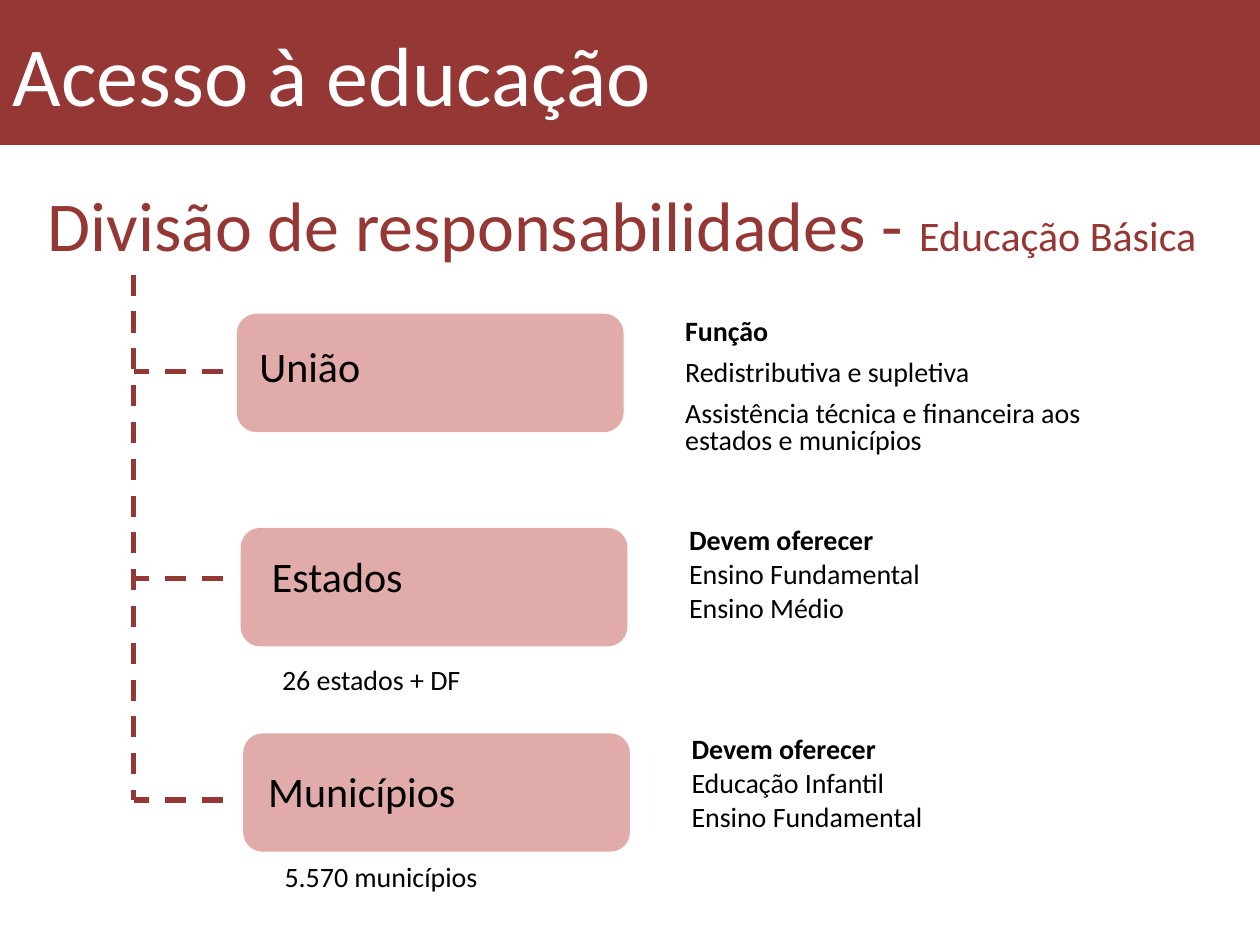
from lxml import etree
from pptx import Presentation, util as u
from pptx.dml.color import RGBColor
from pptx.enum import dml, shapes, text
from pptx.oxml.ns import qn

COLORS = {"dark": "953735", "box": "D99694", "black": "000000", "white": "FFFFFF"}
FONT = "Calibri"
TITLE = "Acesso à educação"
HEADING = [("Divisão de responsabilidades - ", 40), ("Educação Básica", 24)]

# Positions are in inches; "label" is the offset of the name from its box.
LEVELS = [
    {"name": "União", "box": (1.88, 2.49), "label": (0.08, 0.16), "branch": 2.95,
     "duties": ["Função", "Redistributiva e supletiva",
                "Assistência técnica e financeira aos estados e municípios"],
     "duties_at": (5.34, 2.49, 3.86, 1.23), "spacing": 0.8},
    {"name": "Estados", "box": (1.91, 4.19), "label": (0.15, 0.13), "branch": 4.59,
     "duties": ["Devem oferecer", "Ensino Fundamental", "Ensino Médio"],
     "duties_at": (5.37, 4.19, 2.99, 0.87), "spacing": 0.6,
     "count": "26 estados + DF", "count_at": (2.14, 5.21, 1.81, 0.37)},
    {"name": "Municípios", "box": (1.93, 5.82), "label": (0.1, 0.21), "branch": 6.35,
     "duties": ["Devem oferecer", "Educação Infantil", "Ensino Fundamental"],
     "duties_at": (5.39, 5.85, 2.99, 0.87), "spacing": 0.6,
     "count": "5.570 municípios", "count_at": (2.16, 6.77, 2.28, 0.37)},
]
BOX_SIZE = (3.07, 0.94)
LABEL_SIZE = (2.99, 0.5)
TRUNK_X, TRUNK_TOP, BRANCH_END = 1.06, 2.18, 1.77


def rgb(name):
    return RGBColor.from_string(COLORS[name])


def inches(values):
    return [u.Inches(value) for value in values]


def style(font, size, color="black", bold=False):
    font.name, font.size, font.bold = FONT, u.Pt(size), bold
    font.color.rgb = rgb(color)


def add_text(slide, at, lines, size, spacing=None):
    """Add a text box; when there are several lines, the first is bold."""
    frame = slide.shapes.add_textbox(*inches(at)).text_frame
    frame.word_wrap = True
    for index, line in enumerate(lines):
        paragraph = frame.add_paragraph() if index else frame.paragraphs[0]
        paragraph.text = line
        style(paragraph.font, size, bold=len(lines) > 1 and index == 0)
        if spacing:
            paragraph.line_spacing = spacing
        if index:
            paragraph.space_before = u.Pt(size / 2)


def add_box(slide, at):
    box = slide.shapes.add_shape(shapes.MSO_SHAPE.ROUNDED_RECTANGLE, *inches(at))
    box.shadow.inherit = False
    box.fill.solid()
    box.fill.fore_color.rgb = rgb("box")
    box.line.fill.background()
    color = box.fill._xPr.find(qn("a:solidFill"))[0]
    etree.SubElement(color, qn("a:alpha"), val="80000")


def add_dashed_line(slide, *ends):
    line = slide.shapes.add_connector(shapes.MSO_CONNECTOR.STRAIGHT, *inches(ends))
    line.line.color.rgb = rgb("dark")
    line.line.width = u.Pt(3)
    line.line.dash_style = dml.MSO_LINE.DASH
    etree.SubElement(line._element.spPr, qn("a:effectLst"))


def add_title(slide):
    title = slide.shapes.title
    title.left, title.top, title.width, title.height = inches((0, 0, 10, 1.15))
    title.fill.solid()
    title.fill.fore_color.rgb = rgb("dark")
    frame = title.text_frame
    frame.text = TITLE
    frame.auto_size = text.MSO_AUTO_SIZE.NONE
    frame.vertical_anchor = text.MSO_ANCHOR.MIDDLE
    paragraph = frame.paragraphs[0]
    paragraph.alignment = text.PP_ALIGN.LEFT
    style(paragraph.font, 48, "white")


def add_heading(slide):
    frame = slide.shapes.add_textbox(*inches((0.28, 1.39, 9.72, 0.77))).text_frame
    frame.word_wrap = True
    for words, size in HEADING:
        run = frame.paragraphs[0].add_run()
        run.text = words
        style(run.font, size, "dark")


def main():
    presentation = Presentation()
    presentation.slide_width, presentation.slide_height = inches((10, 7.5))
    slide = presentation.slides.add_slide(presentation.slide_layouts[5])
    add_title(slide)
    add_heading(slide)
    add_dashed_line(slide, TRUNK_X, TRUNK_TOP, TRUNK_X, LEVELS[-1]["branch"])
    for level in LEVELS:
        left, top = level["box"]
        shift_x, shift_y = level["label"]
        add_dashed_line(slide, BRANCH_END, level["branch"], TRUNK_X, level["branch"])
        add_text(slide, level["duties_at"], level["duties"], 16, level["spacing"])
        add_box(slide, (left, top, *BOX_SIZE))
        add_text(slide, (left + shift_x, top + shift_y, *LABEL_SIZE), [level["name"]], 24)
        if "count" in level:
            add_text(slide, level["count_at"], [level["count"]], 16)
    presentation.save("out.pptx")


if __name__ == "__main__":
    main()
